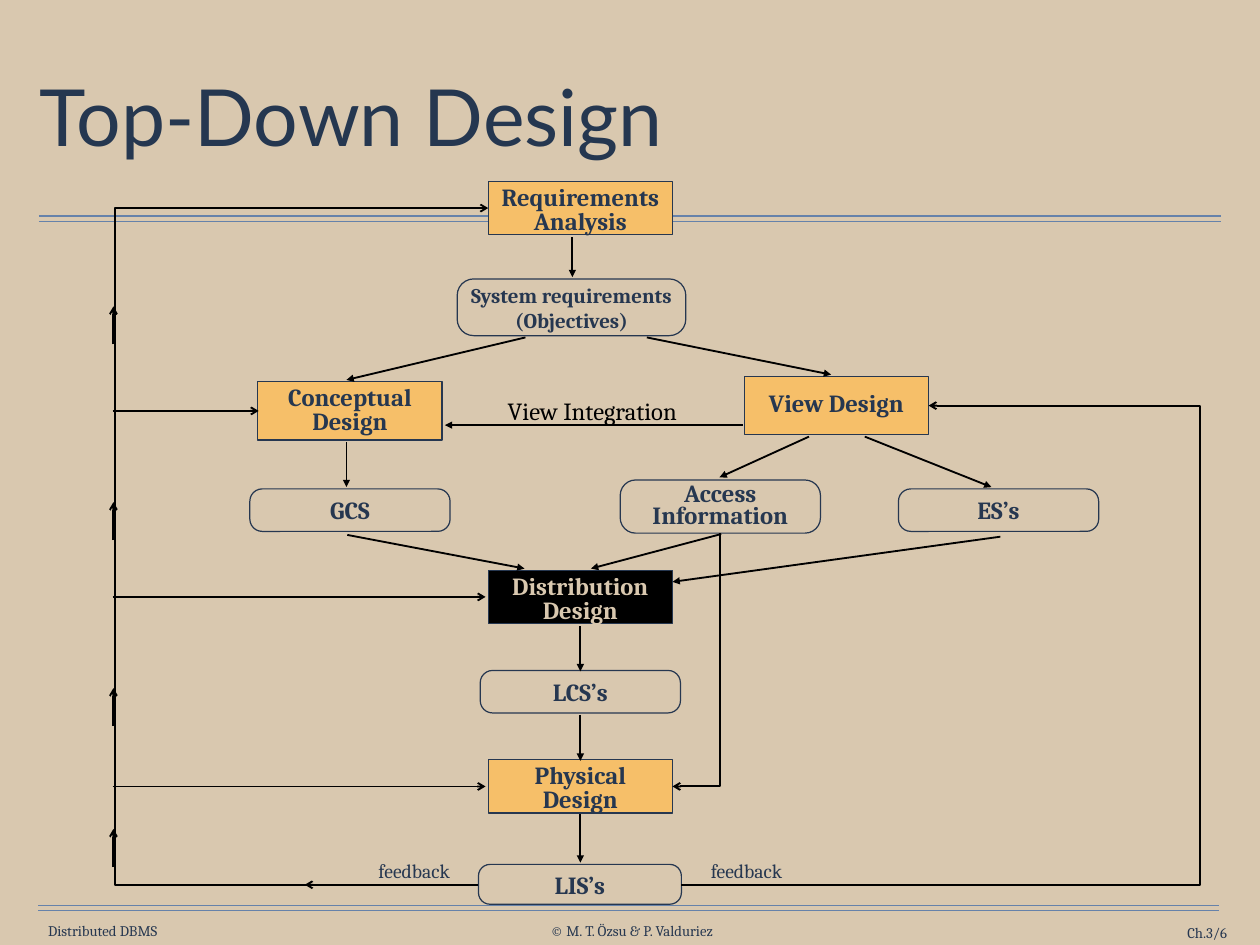
import pptx
import pptx.util
import pptx.dml.color
import pptx.enum.shapes
import pptx.enum.text
import pptx.oxml
import pptx.oxml.ns

Inches = pptx.util.Inches
Pt = pptx.util.Pt
RGBColor = pptx.dml.color.RGBColor
Shape = pptx.enum.shapes.MSO_SHAPE
Link = pptx.enum.shapes.MSO_CONNECTOR
Align = pptx.enum.text.PP_ALIGN
Anchor = pptx.enum.text.MSO_ANCHOR

SAND = RGBColor(0xD9, 0xC8, 0xAF)
NAVY = RGBColor(0x26, 0x37, 0x50)
TITLE = RGBColor(0x25, 0x37, 0x50)
GOLD = RGBColor(0xF6, 0xBF, 0x69)
BLACK = RGBColor(0, 0, 0)
RULE = RGBColor(0x66, 0x82, 0xAA)

RULES = [(0.44, 2.44, 13.78), (0.44, 2.5, 13.78), (0.43, 10.22, 13.76), (0.43, 10.28, 13.76)]

FOOT = [
    ("Distributed DBMS", 0.47, 10.41, 1.38, Align.CENTER),
    ("© M. T. Özsu & P. Valduriez", 6.09, 10.41, 2.08, Align.CENTER),
    ("Ch.3/6", 12.31, 10.43, 1.54, Align.RIGHT),
]

STEPS = [
    (["Requirements", "Analysis"], 5.51, 2.05, 0.6, GOLD, NAVY, Anchor.TOP),
    (["Conceptual", "Design"], 2.91, 4.31, 0.66, GOLD, NAVY, Anchor.TOP),
    (["View Design"], 8.4, 4.25, 0.66, GOLD, NAVY, Anchor.MIDDLE),
    (["Distribution", "Design"], 5.51, 6.44, 0.6, BLACK, SAND, Anchor.TOP),
    (["Physical", "Design"], 5.51, 8.58, 0.6, GOLD, NAVY, Anchor.TOP),
]

RESULTS = [
    (["System requirements", "(Objectives)"], 5.16, 3.15, 2.58, 0.64, 17, 1, 0.07),
    (["Access", "Information"], 7, 5.42, 2.26, 0.6, 20, 0.75, 0),
    (["ES’s"], 10.14, 5.52, 2.26, 0.48, 20, 1, 0.07),
    (["GCS"], 2.82, 5.52, 2.26, 0.48, 20, 1, 0.07),
    (["LCS’s"], 5.42, 7.57, 2.26, 0.48, 20, 1, 0.07),
    (["LIS’s"], 5.4, 9.76, 2.29, 0.45, 20, 1, 0.07),
]

FLOWS = [
    (6.55, 9.19, 6.55, 9.74), (6.55, 8.07, 6.55, 8.59), (6.55, 7.07, 6.55, 7.58),
    (8.14, 6.03, 6.67, 6.42), (11.29, 6.06, 7.59, 6.57), (3.92, 6.04, 5.92, 6.42),
    (5.93, 3.81, 3.91, 4.29), (7.3, 3.81, 9.38, 4.23), (3.91, 4.99, 3.91, 5.5),
    (9.13, 4.93, 8.12, 5.39), (9.76, 4.93, 11.19, 5.5), (8.38, 4.8, 5.02, 4.8),
    (6.46, 2.68, 6.46, 3.13),
]

LOOPS = [
    (5.4, 9.99, 5.51, 2.35, 1.29),
    (8.13, 6.02, 7.59, 8.88, 8.13),
    (7.69, 9.99, 10.48, 4.58, 13.54),
]

BACK = [(1.27, 8.88, 5.48, 8.88), (1.27, 6.74, 5.48, 6.74),
        (1.27, 4.64, 2.92, 4.64), (4.15, 9.99, 3.44, 9.99)]
RISES = [9.79, 8.2, 6.1, 3.89]

deck = pptx.Presentation()
deck.slide_width = Inches(14.22)
deck.slide_height = Inches(10.67)
slide = deck.slides.add_slide(deck.slide_layouts[5])
slide.background.fill.solid()
slide.background.fill.fore_color.rgb = SAND


def write(shape, lines, size, color, align=Align.CENTER, bold=False,
          space=1, pad=(0, 0), anchor=Anchor.MIDDLE, font="Cambria", wrap=False):
    frame = shape.text_frame
    frame.word_wrap = wrap
    frame.vertical_anchor = anchor
    frame.margin_left = frame.margin_right = Inches(pad[0])
    frame.margin_top = frame.margin_bottom = Inches(pad[1])
    frame.text = "\n".join(lines)
    for para in frame.paragraphs:
        para.alignment = align
        para.line_spacing = space
        para.font.name = font
        para.font.size = Pt(size)
        para.font.bold = bold
        para.font.color.rgb = color


def label(text, x, y, w, h, size, color, **style):
    box = slide.shapes.add_textbox(Inches(x), Inches(y), Inches(w), Inches(h))
    write(box, [text], size, color, **style)


def block(kind, x, y, w, h, fill=None):
    shape = slide.shapes.add_shape(kind, Inches(x), Inches(y), Inches(w), Inches(h))
    shape.shadow.inherit = False
    shape.line.color.rgb = NAVY
    shape.line.width = Pt(1)
    if fill is None:
        shape.fill.background()
    else:
        shape.fill.solid()
        shape.fill.fore_color.rgb = fill
    return shape


def join(x1, y1, x2, y2, head=None, color=BLACK, width=1.5, kind=Link.STRAIGHT):
    line = slide.shapes.add_connector(kind, Inches(x1), Inches(y1), Inches(x2), Inches(y2))
    line.line.color.rgb = color
    line.line.width = Pt(width)
    props = line._element.spPr
    if head:
        tail = pptx.oxml.ns.qn("a:tailEnd")
        line.line._get_or_add_ln().append(props.makeelement(tail, {"type": head}))
    props.append(props.makeelement(pptx.oxml.ns.qn("a:effectLst"), {}))
    return line


def loop(x1, y1, x2, y2, via):
    line = join(x1, y1, x2, y2, "arrow", kind=Link.ELBOW)
    shape = line._element.spPr.find(pptx.oxml.ns.qn("a:prstGeom"))
    guides = shape.find(pptx.oxml.ns.qn("a:avLst"))
    bend = round((via - x1) / (x2 - x1) * 100000)
    guide = {"name": "adj1", "fmla": f"val {bend}"}
    guides.append(guides.makeelement(pptx.oxml.ns.qn("a:gd"), guide))


for left, y, right in RULES:
    join(left, y, right, y, color=RULE, width=1)
for text, x, y, w, align in FOOT:
    label(text, x, y, w, 0.2, 12, NAVY, align=align, wrap=align == Align.RIGHT)

title = slide.shapes.title
title.left, title.top = Inches(0.39), Inches(0.49)
title.width, title.height = Inches(13.44), Inches(1.76)
write(title, ["Top-Down Design"], 64, TITLE, Align.LEFT, space=0.9,
      pad=(0.06, 0.06), font="Lato", wrap=True)

label("View Integration", 5.5, 4.4, 2.37, 0.48, 20, BLACK, pad=(0.14, 0.07), anchor=Anchor.TOP)

for lines, x, y, h, fill, ink, anchor in STEPS:
    step = block(Shape.RECTANGLE, x, y, 2.08, h, fill)
    write(step, lines, 20, ink, bold=True, space=0.8, pad=(0.14, 0.07), anchor=anchor)

for lines, x, y, w, h, size, space, pad in RESULTS:
    result = block(Shape.ROUNDED_RECTANGLE, x, y, w, h)
    result.adjustments[0] = 0.29
    write(result, lines, size, NAVY, bold=True, space=space, pad=(0.14, pad))

for ends in FLOWS:
    join(*ends, "triangle")
for ends in LOOPS:
    loop(*ends)
for ends in BACK:
    join(*ends, "arrow")
for y in RISES:
    join(1.28, y, 1.28, y - 0.43, "arrow")

for x in (4.12, 7.87):
    label("feedback", x, 9.65, 1.11, 0.37, 16, NAVY, pad=(0.1, 0.05), anchor=Anchor.TOP)

deck.save("out.pptx")
